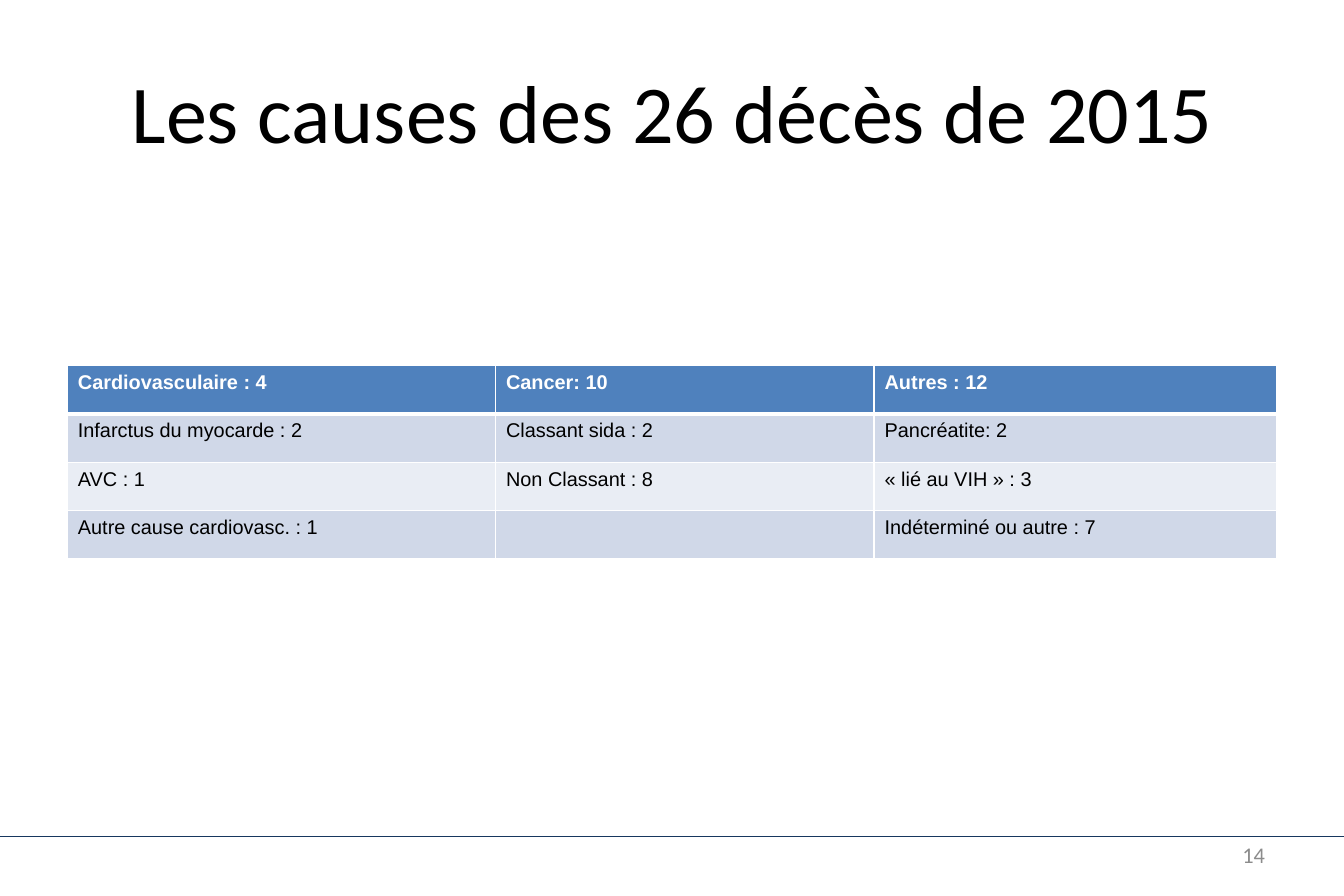
"""Build the slide on the causes of the 26 deaths of 2015."""
from lxml.etree import SubElement
from pptx import Presentation
from pptx.dml.color import RGBColor
from pptx.enum.shapes import MSO_CONNECTOR
from pptx.enum.text import MSO_ANCHOR, MSO_AUTO_SIZE, PP_ALIGN
from pptx.oxml.ns import qn
from pptx.util import Inches, Pt

COLORS = {
    "text": "000000",
    "white": "FFFFFF",
    "header": "4F81BD",
    "odd": "D0D8E8",
    "even": "E9EDF4",
    "rule": "17375E",
    "number": "8C8C8C",
}
FORMATS = {
    "title": {"name": "Calibri", "size": Pt(49.5), "bold": False},
    "header": {"name": "Arial", "size": Pt(12), "bold": True},
    "cell": {"name": "Arial", "size": Pt(12), "bold": False},
    "number": {"name": "Calibri", "size": Pt(13.5), "bold": False},
}
FRAME = {"word_wrap": True, "auto_size": MSO_AUTO_SIZE.NONE, "vertical_anchor": MSO_ANCHOR.MIDDLE}
CELL = {
    "margin_left": Inches(0.09),
    "margin_right": Inches(0.09),
    "margin_top": Inches(0.05),
    "margin_bottom": Inches(0.05),
    "vertical_anchor": MSO_ANCHOR.TOP,
}
CAUSES = [
    ["Cardiovasculaire : 4", "Cancer: 10", "Autres : 12"],
    ["Infarctus du myocarde : 2", "Classant sida : 2", "Pancréatite: 2"],
    ["AVC : 1", "Non Classant : 8", "« lié au VIH » : 3"],
    ["Autre cause cardiovasc. : 1", "", "Indéterminé ou autre : 7"],
]


def apply(target, values):
    """Set each named attribute on the target."""
    for name, value in values.items():
        setattr(target, name, value)


def color(name):
    """Return a palette colour."""
    return RGBColor.from_string(COLORS[name])


class SlideBuilder:
    """Place styled elements on a slide by shares of its size."""

    def __init__(self, deck):
        """Open a title-only slide."""
        self.width, self.height = deck.slide_width, deck.slide_height
        self.slide = deck.slides.add_slide(deck.slide_layouts[5])

    def area(self, left, top, width, height):
        """Turn shares of the slide into lengths."""
        return (int(left * self.width), int(top * self.height),
                int(width * self.width), int(height * self.height))

    def add_text(self, para, text, style, tint, align):
        """Add one formatted run to a paragraph."""
        para.alignment = align
        span = para.add_run()
        span.text = text
        apply(span.font, FORMATS[style])
        span.font.color.rgb = color(tint)

    def title(self, text, shares):
        """Fill and move the title placeholder."""
        box = self.slide.shapes.title
        apply(box, dict(zip(("left", "top", "width", "height"), self.area(*shares))))
        apply(box.text_frame, FRAME)
        self.add_text(box.text_frame.paragraphs[0], text, "title", "text", PP_ALIGN.CENTER)

    def label(self, text, shares):
        """Add a right-aligned page number."""
        box = self.slide.shapes.add_textbox(*self.area(*shares))
        apply(box.text_frame, FRAME)
        self.add_text(box.text_frame.paragraphs[0], text, "number", "number", PP_ALIGN.RIGHT)

    def rule(self, top):
        """Draw a thin line across the slide."""
        height = int(top * self.height)
        line = self.slide.shapes.add_connector(MSO_CONNECTOR.STRAIGHT, 0, height, self.width, height)
        line.line.width = Pt(0.25)
        line.line.color.rgb = color("rule")
        SubElement(line._element.spPr, qn("a:effectLst"))

    def borders(self, cell, widths):
        """Give a cell white edges of the given widths."""
        properties = cell._tc.get_or_add_tcPr()
        for edge, width in widths.items():
            line = SubElement(properties, qn(f"a:ln{edge}"), w=str(Pt(width)))
            fill = SubElement(line, qn("a:solidFill"))
            SubElement(fill, qn("a:srgbClr"), val=COLORS["white"])

    def table(self, rows, shares, column_shares):
        """Add a banded table with a header row."""
        area = self.area(*shares)
        grid = self.slide.shapes.add_table(len(rows), len(rows[0]), *area).table
        for column, share in zip(grid.columns, column_shares):
            column.width = int(share * area[2])
        for row, texts in enumerate(rows):
            band = "header" if row == 0 else ("even", "odd")[row % 2]
            style, tint = ("header", "white") if row == 0 else ("cell", "text")
            for column, text in enumerate(texts):
                cell = grid.cell(row, column)
                apply(cell, CELL)
                self.borders(cell, {"L": 1, "R": 1, "T": 3 if row == 1 else 1, "B": 3 if row == 0 else 1})
                cell.fill.solid()
                cell.fill.fore_color.rgb = color(band)
                if text:
                    self.add_text(cell.text_frame.paragraphs[0], text, style, tint, PP_ALIGN.LEFT)


def main():
    """Build and save the deck."""
    deck = Presentation()
    apply(deck, {"slide_width": Inches(11.25), "slide_height": Inches(7.5)})
    page = SlideBuilder(deck)
    page.rule(14 / 15)
    page.title("Les causes des 26 décès de 2015", (0.05, 0.04, 0.9, 1 / 6))
    page.table(CAUSES, (0.05, 0.408, 0.9, 0.216), (0.354, 0.313, 0.333))
    page.label("14", (0.717, 0.927, 0.233, 0.053))
    deck.save("out.pptx")


if __name__ == "__main__":
    main()
